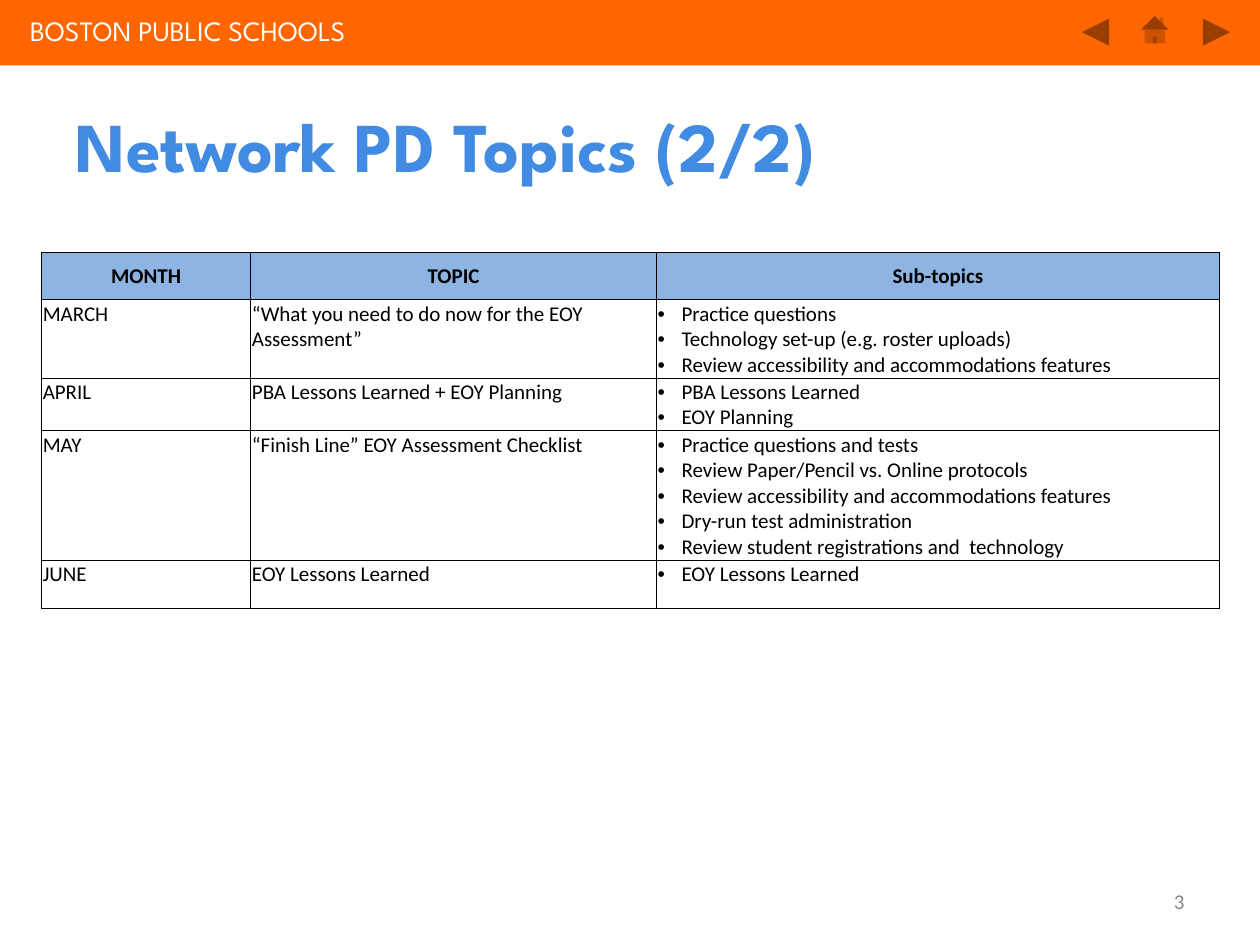
from lxml import etree
from pptx import Presentation
from pptx.dml.color import RGBColor
from pptx.enum.shapes import MSO_SHAPE
from pptx.enum.text import MSO_ANCHOR, MSO_AUTO_SIZE, PP_ALIGN
from pptx.oxml.ns import qn
from pptx.util import Inches, Pt

ORANGE = RGBColor(0xFF, 0x66, 0x00)
BLUE = RGBColor(0x42, 0x8B, 0xE3)
PALE = RGBColor(0x8D, 0xB4, 0xE2)
GREY = RGBColor(0x89, 0x89, 0x89)
WHITE = RGBColor(0xFF, 0xFF, 0xFF)
BLACK = RGBColor(0, 0, 0)
HEAD, BODY = "League Spartan", "Calibri"
LEFT, CENTER, RIGHT = PP_ALIGN.LEFT, PP_ALIGN.CENTER, PP_ALIGN.RIGHT
TOP, MIDDLE = MSO_ANCHOR.TOP, MSO_ANCHOR.MIDDLE
RECT = MSO_SHAPE.RECTANGLE
BACK = MSO_SHAPE.ACTION_BUTTON_BACK_OR_PREVIOUS
HOME = MSO_SHAPE.ACTION_BUTTON_HOME
NEXT = MSO_SHAPE.ACTION_BUTTON_FORWARD_OR_NEXT
NO_FIT = MSO_AUTO_SIZE.NONE


def write(para, text, size, font, color, bold=False, align=LEFT):
    para.alignment = align
    run = para.add_run()
    run.text = text
    run.font.size = Pt(size)
    run.font.name = font
    run.font.bold = bold
    run.font.color.rgb = color


def style(cell, fill=None):
    cell.margin_left = cell.margin_right = cell.margin_top = Inches(0.01)
    cell.margin_bottom = 0
    props = cell._tc.get_or_add_tcPr()
    for side in ("a:lnL", "a:lnR", "a:lnT", "a:lnB"):
        line = etree.SubElement(props, qn(side), w=str(Pt(0.5)))
        paint = etree.SubElement(line, qn("a:solidFill"))
        etree.SubElement(paint, qn("a:srgbClr"), val=str(BLACK))
    if fill is None:
        cell.fill.background()
    else:
        cell.fill.solid()
        cell.fill.fore_color.rgb = fill


prs = Presentation()
prs.slide_width, prs.slide_height = Inches(10), Inches(7.5)
slide = prs.slides.add_slide(prs.slide_layouts[5])
shapes = slide.shapes

# Top band and navigation buttons
for kind, x, y, w, h in [
    (RECT, 0, 0, 10.03, 0.52),
    (NEXT, 9.51, 0.11, 0.29, 0.29),
    (BACK, 8.55, 0.11, 0.29, 0.29),
    (HOME, 9.02, 0.09, 0.29, 0.29),
]:
    shape = shapes.add_shape(kind, Inches(x), Inches(y), Inches(w), Inches(h))
    shape.shadow.inherit = False
    shape.fill.solid()
    shape.fill.fore_color.rgb = ORANGE
    shape.line.fill.background()

# Band label
label = shapes.add_textbox(Inches(0.14), Inches(0.06), Inches(8.32), Inches(0.37))
label.text_frame.word_wrap = True
write(label.text_frame.paragraphs[0], "BOSTON PUBLIC SCHOOLS", 16, HEAD, WHITE)

# Title
title = shapes.title
title.left, title.top = Inches(0.5), Inches(0.74)
title.width, title.height = Inches(9), Inches(0.82)
title.text_frame.auto_size = NO_FIT
title.text_frame.vertical_anchor = MIDDLE
write(title.text_frame.paragraphs[0], "Network PD Topics (2/2)", 40, HEAD, BLUE, True)

# Topic table
heads = ["MONTH", "TOPIC", "Sub-topics"]
plan = [
    ("MARCH", "“What you need to do now for the EOY Assessment”",
     ["Practice questions", "Technology set-up (e.g. roster uploads)",
      "Review accessibility and accommodations features"]),
    ("APRIL", "PBA Lessons Learned + EOY Planning",
     ["PBA Lessons Learned", "EOY Planning"]),
    ("MAY", "“Finish Line” EOY Assessment Checklist",
     ["Practice questions and tests", "Review Paper/Pencil vs. Online protocols",
      "Review accessibility and accommodations features",
      "Dry-run test administration",
      "Review student registrations and  technology"]),
    ("JUNE", "EOY Lessons Learned", ["EOY Lessons Learned"]),
]
widths = [1.66, 3.22, 4.47]
heights = [0.38, 0.62, 0.42, 1.03, 0.38]
table = shapes.add_table(len(heights), len(widths), Inches(0.33), Inches(2),
                         Inches(sum(widths)), Inches(sum(heights))).table
table.first_row = table.horz_banding = False
for col, width in zip(table.columns, widths):
    col.width = Inches(width)
for row, height in zip(table.rows, heights):
    row.height = Inches(height)

# Header row
for cell, text in zip(table.rows[0].cells, heads):
    style(cell, PALE)
    cell.vertical_anchor = MIDDLE
    write(cell.text_frame.paragraphs[0], text, 12, BODY, BLACK, True, CENTER)

# Month rows, with bulleted sub-topics
for r, (month, topic, subs) in enumerate(plan, 1):
    for c, lines in enumerate([[month], [topic], subs]):
        cell = table.cell(r, c)
        style(cell)
        cell.vertical_anchor = TOP
        frame = cell.text_frame
        for i, text in enumerate(lines):
            para = frame.add_paragraph() if i else frame.paragraphs[0]
            write(para, text, 12, BODY, BLACK)
            if c == 2:
                props = para._p.get_or_add_pPr()
                props.set("marL", str(Inches(0.19)))
                props.set("indent", str(Inches(-0.19)))
                etree.SubElement(props, qn("a:buFont"), typeface="Arial")
                etree.SubElement(props, qn("a:buChar"), char="•")

# Page number
page = shapes.add_textbox(Inches(7.17), Inches(6.95), Inches(2.33), Inches(0.4))
page.text_frame.word_wrap = True
page.text_frame.vertical_anchor = MIDDLE
write(page.text_frame.paragraphs[0], "3", 12, BODY, GREY, align=RIGHT)

prs.save("out.pptx")
